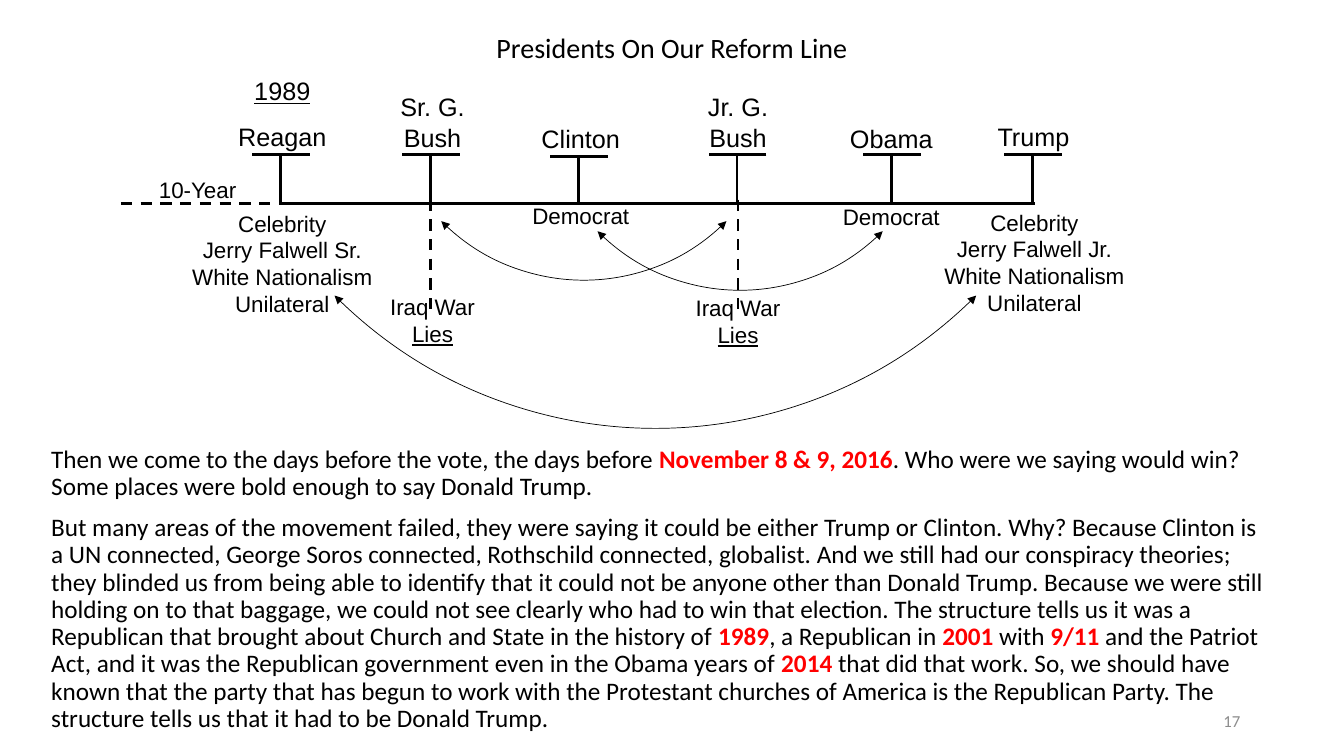
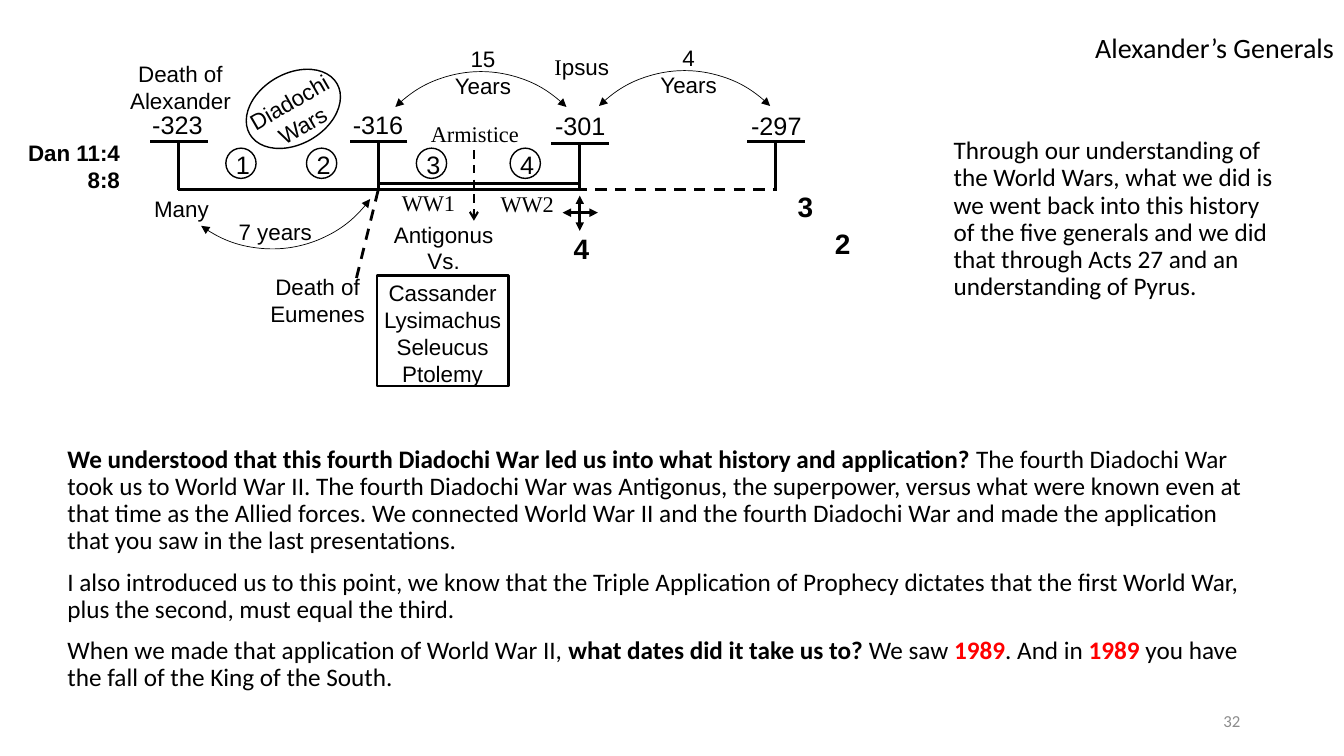
from pptx import Presentation
from pptx.dml.color import RGBColor as RGB
from pptx.enum.dml import MSO_LINE
from pptx.enum.shapes import MSO_CONNECTOR as CONN, MSO_SHAPE as SHAPE
from pptx.enum.text import MSO_ANCHOR as ANCHOR, PP_ALIGN as ALIGN
from pptx.oxml.ns import qn
from pptx.util import Pt
from lxml import etree

PX = 9144  # 100 px to the inch
COLORS = {"ink": "000000", "date": "FF0000", "number": "8C8C8C"}
LABEL = {"name": "Arial", "size": Pt(16)}
BIG = {"size": Pt(18)}
BODY = {"name": "Calibri", "size": Pt(18)}
TITLE = {"name": "Calibri", "size": Pt(20)}
NUMBER = {"name": "Calibri", "size": Pt(12), "color": "number"}
BOLD = {"bold": True}
HEAVY = {"size": Pt(20), "bold": True}
UNDER = {"underline": True}
SERIF = {"name": "Times New Roman"}
DATE = {"bold": True, "color": "date"}
PROSE = {"line_spacing": 0.9, "space_before": Pt(10)}


def outline(sp, width, dash=False, head=None, tail=None):
    sp.line.color.rgb = RGB.from_string(COLORS["ink"])
    sp.line.width = Pt(width)
    if dash:
        sp.line.dash_style = MSO_LINE.DASH
    ln = sp.line._get_or_add_ln()
    for tag, kind in (("a:headEnd", head), ("a:tailEnd", tail)):
        if kind:
            etree.SubElement(ln, qn(tag)).set("type", kind)


def write(sp, paras, fmt, align=ALIGN.CENTER, inset=(4, 4), anchor=ANCHOR.TOP, spacing=None):
    tf = sp.text_frame
    tf.word_wrap = True
    tf.vertical_anchor = anchor
    tf.margin_left = tf.margin_right = inset[0] * PX
    tf.margin_top = tf.margin_bottom = inset[1] * PX
    for i, runs in enumerate(paras):
        p = tf.add_paragraph() if i else tf.paragraphs[0]
        p.alignment = align
        for key, value in (spacing or {}).items():
            setattr(p, key, value)
        for run in [runs] if isinstance(runs, str) else runs:
            words, extra = (run, {}) if isinstance(run, str) else run
            r = p.add_run()
            r.text = words
            look = {"color": "ink", **fmt, **extra}
            r.font.color.rgb = RGB.from_string(COLORS[look.pop("color")])
            for key, value in look.items():
                setattr(r.font, key, value)


reform = {
    "title": "Presidents On Our Reform Line", "title_align": ALIGN.CENTER, "number": "17",
    # stem centre, bar height, foot of the stem
    "stems": [(278, 153, 201), (427, 153, 201), (574, 155, 200),
              (731, 153, 201), (884, 153, 201), (1024, 153, 201)],
    # ends, width, dashed, head, tail
    "lines": [(277, 202, 1027, 202, 2), (120, 202, 270, 202, 2, True),
              (427, 198, 427, 308, 2, True), (732, 198, 732, 308, 2, True)],
    # left, top, diameter, rotation
    "arcs": [(379, -122, 400, 135), (534, -112, 400, 135), (200, -475, 900, 135)],
    "ovals": [],
    # left, top, width, height, paragraphs, format, frame options
    "labels": [
        (247, 71, 66, 36, ["1989"], {**BIG, **UNDER}),
        (230, 116, 100, 40, ["Reagan"], BIG),
        (389, 87, 80, 70, ["Sr. G. Bush"], BIG),
        (531, 118, 90, 36, ["Clinton"], BIG),
        (692, 87, 80, 70, ["Jr. G. Bush"], BIG),
        (839, 118, 90, 36, ["Obama"], BIG),
        (985, 116, 80, 40, ["Trump"], BIG),
        (146, 171, 100, 40, ["10-Year"]),
        (522, 197, 108, 36, ["Democrat"]),
        (830, 198, 108, 36, ["Democrat"]),
        (185, 204, 190, 110, ["Celebrity", "Jerry Falwell Sr.", "White Nationalism", "Unilateral"]),
        (931, 203, 190, 110, ["Celebrity", "Jerry Falwell Jr.", "White Nationalism", "Unilateral"]),
        (379, 287, 100, 60, ["Iraq War", [("Lies", UNDER)]]),
        (682, 288, 100, 60, ["Iraq War", [("Lies", UNDER)]]),
    ],
    "bodies": [
        (41, 438, 1224, 292, [
            ["Then we come to the days before the vote, the days before ",
             ("November 8 & 9, 2016", DATE),
             ". Who were we saying would win? Some places were bold enough to say Donald Trump."],
            ["But many areas of the movement failed, they were saying it could be either Trump or "
             "Clinton. Why? Because Clinton is a UN connected, George Soros connected, Rothschild "
             "connected, globalist. And we still had our conspiracy theories; they blinded us from "
             "being able to identify that it could not be anyone other than Donald Trump. Because we "
             "were still holding on to that baggage, we could not see clearly who had to win that "
             "election. The structure tells us it was a Republican that brought about Church and "
             "State in the history of ", ("1989", DATE), ", a Republican in ", ("2001", DATE),
             " with ", ("9/11", DATE),
             " and the Patriot Act, and it was the Republican government even in the Obama years of ",
             ("2014", DATE),
             " that did that work. So, we should have known that the party that has begun to work "
             "with the Protestant churches of America is the Republican Party. The structure tells "
             "us that it had to be Donald Trump."],
        ]),
    ],
}

generals = {
    "title": "Alexander’s Generals", "title_align": ALIGN.RIGHT, "number": "32",
    "stems": [(177, 140, 189), (375, 140, 189), (575, 142, 188), (769, 140, 188)],
    "lines": [(177, 188, 577, 188, 2), (375, 182, 575, 182, 2),
              (571, 188, 771, 188, 2, True), (375, 189, 353, 278, 2, True),
              (470, 149, 470, 219, 1.5, True, None, "arrow"),
              (575, 194, 575, 229, 2, False, "triangle", "triangle"),
              (593, 211, 558, 211, 2, False, "triangle", "triangle")],
    "arcs": [(357, 71, 240, 315), (559, 70, 240, 315), (150, 7, 240, 126)],
    # left, top, width, height, rotation
    "ovals": [(241, 73, 100, 70, 330)] + [(x, 147, 30, 30, 0) for x in (224, 304, 413, 506)],
    "labels": [
        (143, 104, 66, 36, ["-323"], BIG),
        (342, 104, 66, 36, ["-316"], BIG),
        (543, 105, 65, 36, ["-301"], BIG),
        (737, 105, 66, 36, ["-297"], BIG),
        (124, 56, 110, 60, ["Death of Alexander"]),
        (260, 267, 110, 60, ["Death of Eumenes"]),
        (145, 190, 70, 36, ["Many"]),
        (228, 217, 90, 30, ["7 years"], {}, {"spacing": {"line_spacing": Pt(16)}}),
        (375, 215, 130, 60, ["Antigonus", "Vs."]),
        (444, 41, 70, 60, ["15 Years"]),
        (648, 40, 70, 60, ["4 Years"]),
        (542, 49, 70, 40, [[("I", SERIF), "psus"]]),
        (23, 134, 100, 60, ["Dan 11:4", "8:8"], BOLD, {"align": ALIGN.RIGHT}),
        (390, 184, 70, 30, ["WW1"], SERIF),
        (488, 185, 70, 30, ["WW2"], SERIF),
        (421, 115, 100, 30, ["Armistice"], SERIF),
        (787, 184, 20, 40, ["3"], HEAVY),
        (565, 226, 20, 40, ["4"], HEAVY),
        (824, 221, 16, 40, ["2"], HEAVY),
    ] + [(x, 144, 20, 40, [str(n)], BIG) for n, x in enumerate((230, 310, 419, 512), 1)],
    "bodies": [
        (936, 132, 339, 183, [
            "Through our understanding of the World Wars, what we did is we went back into this "
            "history of the five generals and we did that through Acts 27 and an understanding of "
            "Pyrus."]),
        (57, 438, 1205, 264, [
            [("We understood that this fourth Diadochi War led us into what history and "
              "application?", BOLD),
             " The fourth Diadochi War took us to World War II. The fourth Diadochi War was "
             "Antigonus, the superpower, versus what were known even at that time as the Allied "
             "forces. We connected World War II and the fourth Diadochi War and made the application "
             "that you saw in the last presentations."],
            "I also introduced us to this point, we know that the Triple Application of Prophecy "
            "dictates that the first World War, plus the second, must equal the third.",
            ["When we made that application of World War II, ",
             ("what dates did it take us to?", BOLD), " We saw ", ("1989", DATE), ". And in ",
             ("1989", DATE), " you have the fall of the King of the South."],
        ]),
    ],
}

prs = Presentation()
prs.slide_width, prs.slide_height = 1333 * PX, 750 * PX

for page in (reform, generals):
    s = prs.slides.add_slide(prs.slide_layouts[6])
    shapes = s.shapes

    # Title and slide number
    for box, words, fmt, align, spacing in (
            ((0, 24, 1333, 50), page["title"], TITLE, page["title_align"], {"line_spacing": 0.9}),
            ((940, 695, 300, 40), page["number"], NUMBER, ALIGN.RIGHT, None)):
        sp = shapes.add_textbox(*[v * PX for v in box])
        write(sp, [words], fmt, align, (10, 5), ANCHOR.MIDDLE, spacing)

    # Timeline, with a T-shaped stem for each date
    lines = list(page["lines"])
    for x, top, foot in page["stems"]:
        lines += [(x + 29, top, x - 28, top, 2), (x, top, x, foot, 2)]
    for x1, y1, x2, y2, *look in lines:
        cn = shapes.add_connector(CONN.STRAIGHT, x1 * PX, y1 * PX, x2 * PX, y2 * PX)
        outline(cn, *look)
        etree.SubElement(cn._element.spPr, qn("a:effectLst"))

    # Curved arrows and ovals
    curves = [(SHAPE.ARC, x, y, d, d, turn, 0.5, "triangle") for x, y, d, turn in page["arcs"]]
    curves += [(SHAPE.OVAL, *oval, 1, None) for oval in page["ovals"]]
    for kind, x, y, w, h, turn, width, arrow in curves:
        sp = shapes.add_shape(kind, x * PX, y * PX, w * PX, h * PX)
        sp.rotation = turn
        sp.shadow.inherit = False
        sp.fill.background()
        outline(sp, width, False, arrow, arrow)

    # Labels of the diagram
    for x, y, w, h, paras, *rest in page["labels"]:
        fmt, options = (rest + [{}, {}][len(rest):])[:2]
        sp = shapes.add_textbox(x * PX, y * PX, w * PX, h * PX)
        write(sp, paras, {**LABEL, **fmt}, **options)

    # Running text
    for x, y, w, h, paras in page["bodies"]:
        sp = shapes.add_textbox(x * PX, y * PX, w * PX, h * PX)
        write(sp, paras, BODY, ALIGN.LEFT, (10, 5), spacing=PROSE)

# Second slide only: tilted name of the wars and the framed allies
sp = shapes.add_textbox(243 * PX, 82 * PX, 100 * PX, 60 * PX)
sp.rotation = 330
write(sp, ["Diadochi Wars"], LABEL)

sp = shapes.add_shape(SHAPE.RECTANGLE, 374 * PX, 273 * PX, 130 * PX, 110 * PX)
sp.shadow.inherit = False
sp.fill.background()
outline(sp, 2)
write(sp, ["Cassander", "Lysimachus", "Seleucus", "Ptolemy"], LABEL)

prs.save("out.pptx")
